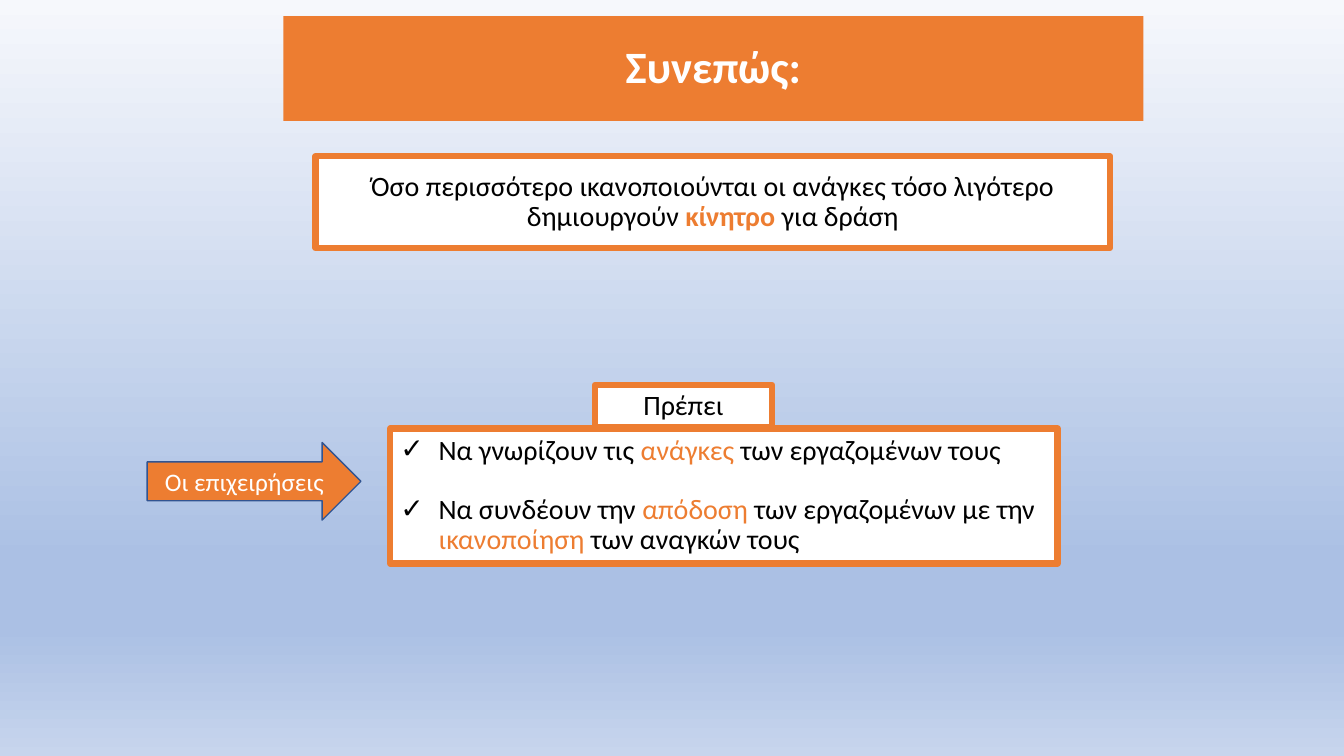
from lxml.etree import SubElement as Sub
from pptx import Presentation
from pptx.dml.color import RGBColor
from pptx.enum.shapes import MSO_SHAPE as Kind
from pptx.enum.text import MSO_ANCHOR, MSO_AUTO_SIZE, PP_ALIGN
from pptx.oxml.ns import qn
from pptx.util import Inches, Pt

ORANGE, WHITE, BLACK, NAVY = "ED7D31", "FFFFFF", "000000", "325491"


def color(hue):
    return RGBColor.from_string(hue)


def dress(box, area, fill, line, width, texts, size, ink, bold=False, space=0.9):
    """Place and style a box; text between asterisks turns orange."""
    box.left, box.top, box.width, box.height = map(Inches, area)
    box.fill.solid()
    box.fill.fore_color.rgb = color(fill)
    if line:
        box.line.color.rgb = color(line)
        box.line.width = Pt(width)
    else:
        box.line.fill.background()
    frame = box.text_frame
    frame.word_wrap = True
    frame.auto_size = MSO_AUTO_SIZE.NONE
    frame.vertical_anchor = MSO_ANCHOR.MIDDLE
    frame.text = "\n".join(texts)
    for para in frame.paragraphs:
        parts = para.text.split("*")
        para.text = parts[0]
        for part in parts[1:]:
            para.add_run().text = part
        para.alignment = PP_ALIGN.CENTER
        para.line_spacing = space
        para.space_before = para.space_after = Pt(0)
        for i, run in enumerate(para.runs):
            font = run.font
            font.name, font.size = "Calibri", Pt(size)
            font.bold = bold
            font.color.rgb = color(ORANGE if i % 2 else ink)
    return frame.paragraphs


deck = Presentation()
deck.slide_width, deck.slide_height = Inches(13.33), Inches(7.5)
slide = deck.slides.add_slide(deck.slide_layouts[1])
shapes = slide.shapes

# Background gradient, top to bottom
back = slide.background.fill
back.gradient()
back.gradient_angle = 270
stops = slide.element.xpath(".//a:gsLst")[0]
for stop in list(stops):
    stops.remove(stop)
for pos, hue in ((0, "F6F8FC"), (74, "ABC0E4"), (83, "ABC0E4"), (100, "C7D5ED")):
    stop = Sub(stops, qn("a:gs"), pos=str(pos * 1000))
    Sub(stop, qn("a:srgbClr"), val=hue)

# Title
dress(shapes.title, (2.81, 0.16, 8.53, 1.04), ORANGE, None, 0,
      ["Συνεπώς:"], 32, WHITE, bold=True)

# Checked list
duties = dress(slide.placeholders[1], (3.87, 4.25, 6.62, 1.34), WHITE, ORANGE, 4.5,
               ["Να γνωρίζουν τις *ανάγκες* των εργαζομένων τους",
                "Να συνδέουν την *απόδοση* των εργαζομένων με την "
                "*ικανοποίηση* των αναγκών τους"], 20, BLACK)
duties[1].space_before = Pt(21)
for duty in duties:
    duty.alignment = PP_ALIGN.LEFT
    props = duty._p.get_or_add_pPr()
    props.set("marL", str(Inches(0.38)))
    props.set("indent", str(-Inches(0.38)))
    Sub(props, qn("a:buChar"), char="✓")

# Statement, list heading and arrow
cards = (
    (Kind.RECTANGLE, (3.13, 1.55, 7.88, 0.91), WHITE, ORANGE, 4.5,
     "Όσο περισσότερο ικανοποιούνται οι ανάγκες τόσο λιγότερο δημιουργούν "
     "*κίνητρο* για δράση", 20, BLACK, 0.9),
    (Kind.RECTANGLE, (5.9, 3.82, 1.76, 0.42), WHITE, ORANGE, 4.5,
     "Πρέπει", 20, BLACK, 0.9),
    (Kind.RIGHT_ARROW, (1.46, 4.39, 2.12, 0.77), ORANGE, NAVY, 1,
     "Οι επιχειρήσεις", 18, WHITE, 1.0),
)
for kind, area, fill, line, width, text, size, ink, space in cards:
    card = shapes.add_shape(kind, 0, 0, 0, 0)
    card.shadow.inherit = False
    paras = dress(card, area, fill, line, width, [text], size, ink, space=space)
    for run in paras[0].runs[1:2]:
        run.font.bold = True

deck.save("out.pptx")
